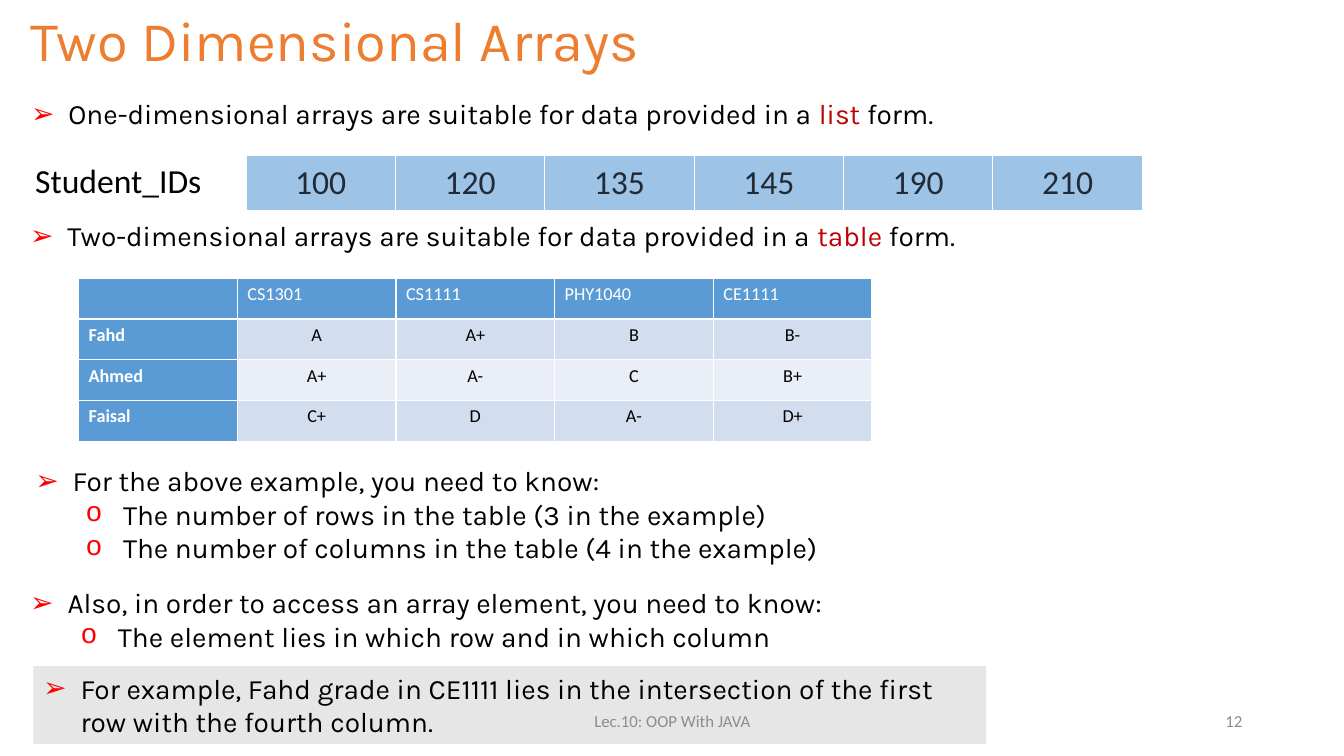
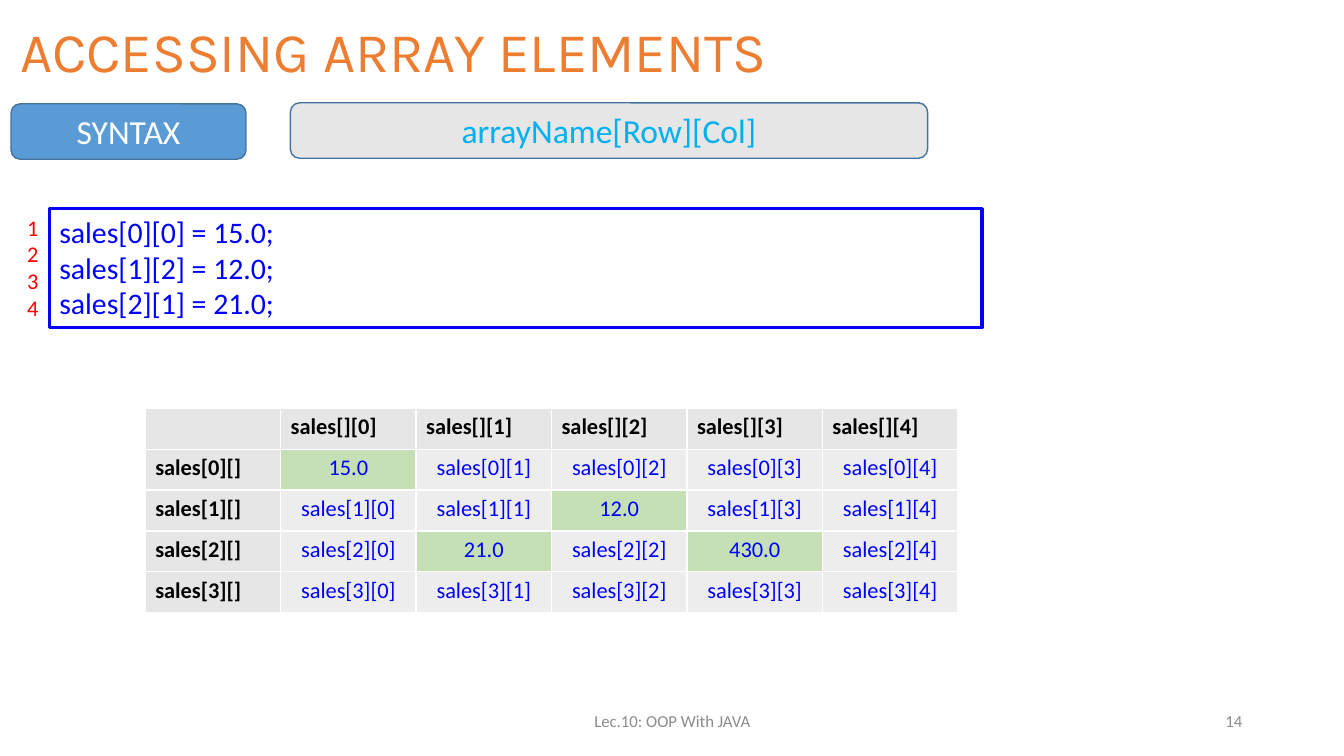
from lxml import etree
from pptx import Presentation
from pptx.dml.color import RGBColor
from pptx.enum import shapes, text
from pptx.oxml.ns import qn
from pptx.util import Inches, Pt

BLACK = RGBColor(0x00, 0x00, 0x00)
WHITE = RGBColor(0xFF, 0xFF, 0xFF)
ORANGE = RGBColor(0xED, 0x7D, 0x31)
RED = RGBColor(0xFF, 0x00, 0x00)
CRIMSON = RGBColor(0xC0, 0x00, 0x00)
BLUE = RGBColor(0x5B, 0x9B, 0xD5)
EDGE = RGBColor(0x43, 0x73, 0x9E)
SKY = RGBColor(0x9D, 0xC3, 0xE6)
CYAN = RGBColor(0x00, 0xB0, 0xF0)
NAVY = RGBColor(0x22, 0x2A, 0x35)
CODE = RGBColor(0x00, 0x00, 0xFF)
BANDS = RGBColor(0xD2, 0xDE, 0xEF), RGBColor(0xEA, 0xEF, 0xF7)
SILVER = RGBColor(0xE7, 0xE6, 0xE6)
PALE = RGBColor(0xED, 0xED, 0xED)
GREEN = RGBColor(0xC5, 0xE0, 0xB4)
GRAY = RGBColor(0x8C, 0x8C, 0x8C)

LEFT, CENTER, RIGHT = (text.PP_ALIGN.LEFT, text.PP_ALIGN.CENTER,
                       text.PP_ALIGN.RIGHT)
TOP, MIDDLE = text.MSO_ANCHOR.TOP, text.MSO_ANCHOR.MIDDLE
RECT, ROUND = (shapes.MSO_SHAPE.RECTANGLE,
               shapes.MSO_SHAPE.ROUNDED_RECTANGLE)

HEAD = dict(name="Karla", size=Pt(40), color=ORANGE)
LIST = dict(name="Karla", size=Pt(20), color=BLACK)
FOOT = dict(name="Calibri", size=Pt(12), color=GRAY)
LABEL = dict(name="Calibri", size=Pt(24), color=BLACK)
GRADE = dict(name="Calibri", size=Pt(13), color=BLACK, bold=False)
CELL = dict(name="Calibri", size=Pt(16), color=CODE, bold=False)
LINE = dict(name="Calibri", size=Pt(21.3), color=CODE)
COUNT = dict(name="Calibri", size=Pt(16), color=RED)

BULLETS = (("➢", "Arial", 0.37), ("o", "Courier New", 0.87))
HANG = 0.37


def style(font, look):
    for key, value in look.items():
        if key == "color":
            font.color.rgb = value
        else:
            setattr(font, key, value)


def place(shape, box):
    for side, size in zip(("left", "top", "width", "height"), box):
        setattr(shape, side, Inches(size))


def write(frame, lines, look, align=LEFT, anchor=TOP, wrap=True):
    """Fill a frame with one paragraph per line."""
    frame.word_wrap = wrap
    frame.auto_size = text.MSO_AUTO_SIZE.NONE
    frame.vertical_anchor = anchor
    for i, line in enumerate(lines):
        par = frame.add_paragraph() if i else frame.paragraphs[0]
        par.alignment = align
        run = par.add_run()
        run.text = line
        style(run.font, look)


def label(slide, box, lines, look, **opts):
    shape = slide.shapes.add_textbox(*map(Inches, box))
    write(shape.text_frame, lines, look, **opts)


def panel(slide, kind, box, fill=None, line=None, width=1):
    shape = slide.shapes.add_shape(kind, *map(Inches, box))
    shape.shadow.inherit = False
    if fill is None:
        shape.fill.background()
    else:
        shape.fill.solid()
        shape.fill.fore_color.rgb = fill
    if line is None:
        shape.line.fill.background()
    else:
        shape.line.color.rgb = line
        shape.line.width = Pt(width)
    return shape


def bullet(par, level):
    mark, face, indent = BULLETS[level]
    par.level = level
    props = par._p.get_or_add_pPr()
    props.set("marL", str(Inches(indent)))
    props.set("indent", str(Inches(-HANG)))
    color = etree.SubElement(props, qn("a:buClr"))
    etree.SubElement(color, qn("a:srgbClr"), val=str(RED))
    etree.SubElement(props, qn("a:buFont"), typeface=face)
    etree.SubElement(props, qn("a:buChar"), char=mark)


def points(shape, items):
    """Each item is a level and its runs; odd runs are stressed."""
    frame = shape.text_frame
    frame.word_wrap = True
    frame.auto_size = text.MSO_AUTO_SIZE.NONE
    frame.vertical_anchor = TOP
    for i, (level, *runs) in enumerate(items):
        par = frame.add_paragraph() if i else frame.paragraphs[0]
        bullet(par, level)
        par.alignment = LEFT
        par.space_before = Pt(0)
        for j, words in enumerate(runs):
            run = par.add_run()
            run.text = words
            style(run.font, LIST | ({"color": CRIMSON} if j % 2 else {}))


def grid(slide, box, rows, look):
    """Add a table; look(row, col) gives fill, font look and alignment."""
    table = slide.shapes.add_table(len(rows), len(rows[0]),
                                   *map(Inches, box)).table
    for r, row in enumerate(rows):
        for c, words in enumerate(row):
            cell = table.cell(r, c)
            fill, font, align = look(r, c)
            cell.fill.solid()
            cell.fill.fore_color.rgb = fill
            par = cell.text_frame.paragraphs[0]
            par.alignment = align
            if words:
                run = par.add_run()
                run.text = words
                style(run.font, font)
            else:
                style(par.font, font)
    return table


def start(deck, layout, title, left, top):
    slide = deck.slides.add_slide(deck.slide_layouts.get_by_name(layout))
    head = slide.shapes.title
    place(head, (left, top, 9.47, 0.65))
    write(head.text_frame, [title], HEAD, anchor=MIDDLE)
    head.text_frame.paragraphs[0].line_spacing = 0.9
    return slide


def footer(slide, number):
    label(slide, (4.42, 6.95, 4.5, 0.4), ["Lec.10: OOP With JAVA"], FOOT,
          align=CENTER, anchor=MIDDLE)
    label(slide, (9.42, 6.95, 3, 0.4), [number], FOOT,
          align=RIGHT, anchor=MIDDLE)


def id_row(slide, left, top):
    label(slide, (left, top, 1.87, 0.5), ["Student_IDs"], LABEL, wrap=False)
    ids = ["100", "120", "135", "145", "190", "210"]
    table = grid(slide, (left + 2.19, top, 8.89, 0.54), [ids],
                 lambda r, c: (SKY, LABEL | dict(color=NAVY, bold=False),
                               CENTER))
    for cell in table.iter_cells():
        cell.margin_left = cell.margin_right = Inches(0.13)
        cell.margin_top = cell.margin_bottom = Inches(0.07)


def grades(slide, box):
    def look(r, c):
        if r and c:
            return BANDS[(r - 1) % 2], GRADE, CENTER
        return BLUE, GRADE | dict(color=WHITE, bold=r > 0), LEFT

    grid(slide, box, [
        ["", "CS1301", "CS1111", "PHY1040", "CE1111"],
        ["Fahd", "A", "A+", "B", "B-"],
        ["Ahmed", "A+", "A-", "C", "B+"],
        ["Faisal", "C+", "D", "A-", "D+"]], look)


def sales(slide, box):
    known = {(0, 0): "15.0", (1, 2): "12.0", (2, 1): "21.0", (2, 3): "430.0"}
    rows = [[""] + [f"sales[][{c}]" for c in range(5)]]
    for r in range(4):
        rows.append([f"sales[{r}][]"] + [
            known.get((r, c), f"sales[{r}][{c}]") for c in range(5)])

    def look(r, c):
        if r and c:
            return GREEN if (r - 1, c - 1) in known else PALE, CELL, CENTER
        return SILVER, CELL | dict(color=BLACK, bold=True), LEFT

    grid(slide, box, rows, look)


def syntax(slide, left, top):
    for x, y, width, words, fill, color in (
            (2.77, 0, 6.32, "arrayName[Row][Col]", SILVER, CYAN),
            (0, 0.01, 2.33, "SYNTAX", BLUE, WHITE)):
        shape = panel(slide, ROUND, (left + x, top + y, width, 0.55),
                      fill, EDGE)
        write(shape.text_frame, [words], LABEL | dict(color=color),
              align=CENTER, anchor=MIDDLE)


def listing(slide, left, top):
    shape = panel(slide, RECT, (left + 0.36, top, 9.25, 1.18),
                  line=CODE, width=2.25)
    write(shape.text_frame, ["sales[0][0] = 15.0;", "sales[1][2] = 12.0;",
                             "sales[2][1] = 21.0;"], LINE)
    label(slide, (left, top, 0.35, 1.18), "1234", COUNT, align=RIGHT)


def arrays(deck):
    slide = start(deck, "Two Content", "Two Dimensional Arrays", 0.2, 0.11)
    for left, top, kind in ((0.21, 0.91, "One-"), (0.2, 2.12, "Two-")):
        box = slide.shapes.add_textbox(*map(Inches, (left, top, 9.45, 0.44)))
        form = "list " if kind == "One-" else "table "
        points(box, [(0, kind + "dimensional arrays are suitable for data "
                      "provided in a ", form, "form.")])
    id_row(slide, 0.25, 1.54)
    grades(slide, (0.78, 2.76, 7.87, 1.62))
    needs, access = slide.placeholders[1], slide.placeholders[2]
    place(needs, (0.25, 4.55, 9.45, 1.11))
    points(needs, [
        (0, "For the above example, you need to know:"),
        (1, "The number of rows in the table (3 in the example)"),
        (1, "The number of columns in the table (4 in the example)")])
    place(access, (0.2, 5.76, 9.45, 0.77))
    points(access, [
        (0, "Also, in order to access an array element, you need to know:"),
        (1, "The element lies in which row and in which column")])
    points(panel(slide, RECT, (0.33, 6.61, 9.45, 0.77), SILVER), [
        (0, "For example, Fahd grade in CE1111 lies in the intersection of "
         "the first row with the fourth column.")])
    footer(slide, "12")


def access(deck):
    slide = start(deck, "Title Only", "ACCESSING ARRAY ELEMENTS", 0.1, 0.21)
    sales(slide, (1.44, 4.05, 8.06, 2.03))
    listing(slide, 0.13, 2.07)
    syntax(slide, 0.11, 1.02)
    footer(slide, "14")


def main():
    deck = Presentation()
    deck.slide_width, deck.slide_height = Inches(13.33), Inches(7.5)
    arrays(deck)
    access(deck)
    deck.save("out.pptx")


if __name__ == "__main__":
    main()
